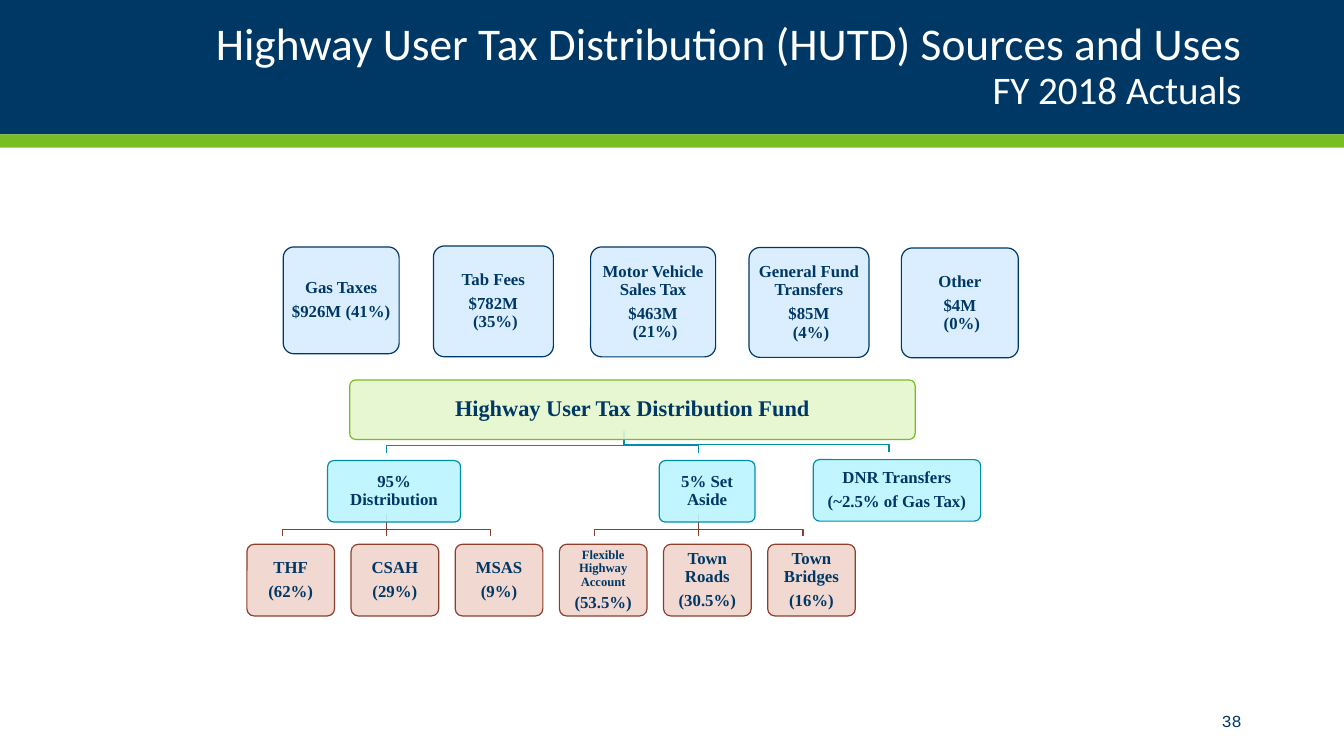
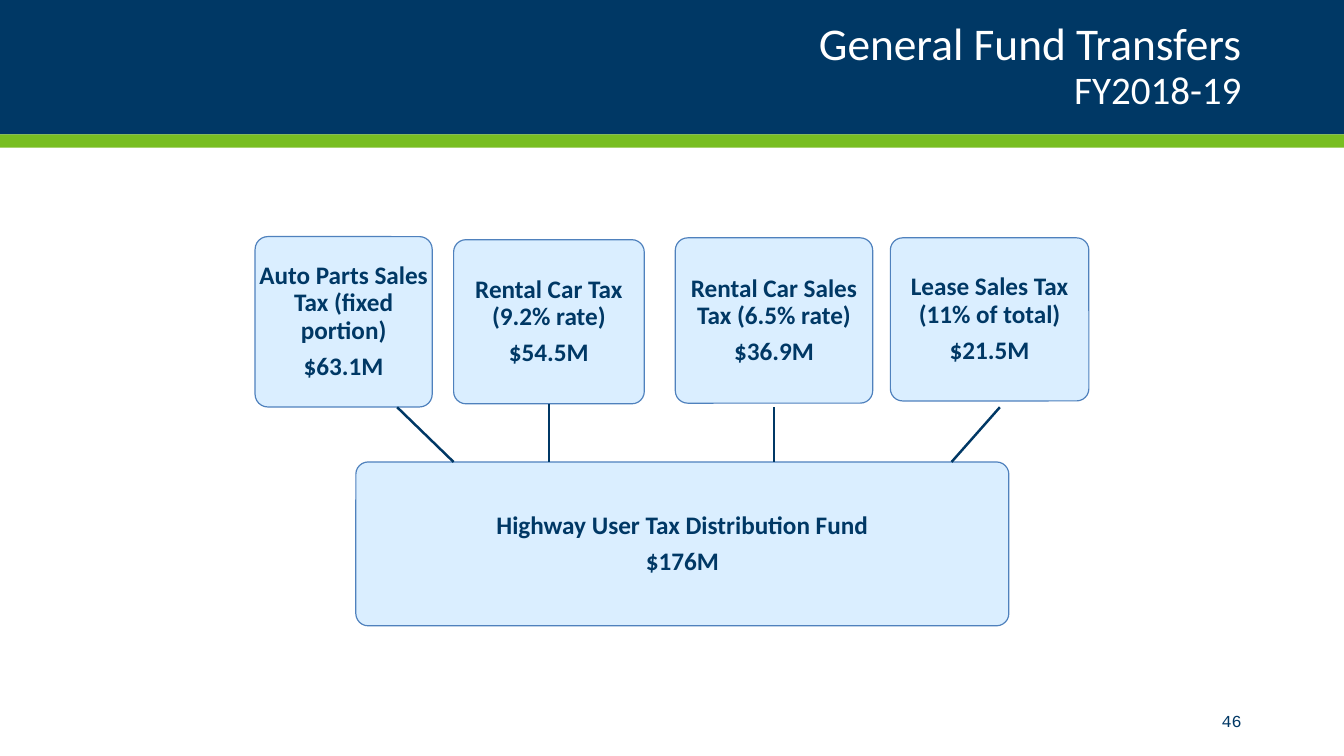
from dataclasses import dataclass

from lxml import etree
from pptx import Presentation
from pptx import util as u
from pptx.dml import color
from pptx.enum import shapes, text
from pptx.oxml import ns

Pt = u.Pt
C = {
    "navy": "003865", "green": "78BE21", "white": "FFFFFF", "sky": "D6EDFF",
    "lime": "E4F7CE", "aqua": "BBF4FF", "teal": "008EAA", "rose": "F0D4CD",
    "rust": "8D3F2B", "blue": "4F81BD",
}
TITLE_ONLY = 5


@dataclass(frozen=True)
class Style:
    fill: str
    line: str
    size: float = 12
    font: str = "Times New Roman"
    radius: float = 0.1
    margin: float = 3.6


@dataclass(frozen=True)
class Box:
    x: float
    y: float
    w: float
    h: float
    lines: tuple[str, ...]
    style: Style
    first_size: float = 0


@dataclass(frozen=True)
class Link:
    x1: float
    y1: float
    x2: float
    y2: float
    color: str
    width: float
    bend: float = 0


SOURCE = Style("sky", "navy")
FUND = Style("lime", "green", 16, margin=5)
USE = Style("aqua", "teal")
SHARE = Style("rose", "rust")
TRANSFER = Style("sky", "blue", 18, "Calibri", 0.075, 0)

SHARE_LEFT, SHARE_PITCH, SHARE_W = 176.4, 74.4, 62.6
SHARES = (
    ("THF", "(62%)"), ("CSAH", "(29%)"), ("MSAS", "(9%)"),
    ("Flexible Highway Account", "(53.5%)"),
    ("Town Roads", "(30.5%)"), ("Town Bridges", "(16%)"),
)
SHARE_X = [201.6 + SHARE_PITCH * i for i in range(len(SHARES))]
FUND_X = 445.7

HUTD_LINKS = [
    Link(FUND_X, 308.2, 635, 322.6, "teal", 0.85, 317.5),
    *(Link(FUND_X, 308.2, SHARE_X[i], 323.3, "teal", 0.85, 318.2) for i in (1, 4)),
    *(Link(SHARE_X[i // 3 * 3 + 1], 367.2, x, 383, "rust", 0.85, 378)
      for i, x in enumerate(SHARE_X)),
]
HUTD_BOXES = [
    Box(202.3, 176.4, 82.8, 76.3, ("Gas Taxes", "$926M (41%)"), SOURCE),
    Box(309.6, 175.7, 85.7, 79.2, ("Tab Fees", "$782M", " (35%)"), SOURCE),
    Box(421.9, 176.4, 89.3, 78.5, ("Motor Vehicle Sales Tax", "$463M", " (21%)"), SOURCE),
    Box(535, 176.8, 85.7, 78.5, ("General Fund Transfers", "$85M", " (4%)"), SOURCE),
    Box(643.9, 177.1, 83.5, 78.5, ("Other", "$4M", " (0%)"), SOURCE),
    Box(249.8, 271.4, 403.9, 42.5, ("Highway User Tax Distribution Fund",), FUND),
    Box(234, 329, 95, 43.9, ("95% Distribution",), USE),
    Box(470.9, 329, 68.4, 43.9, ("5% Set Aside",), USE),
    Box(581, 328.3, 119.5, 43.9, ("DNR Transfers", "(~2.5% of Gas Tax)"), USE),
    *(Box(SHARE_LEFT + SHARE_PITCH * i, 388.8, SHARE_W, 51.2, lines, SHARE,
          9 if i == 3 else 0)
      for i, lines in enumerate(SHARES)),
]

RENTAL = Box(324, 171.2, 136.2, 117.2, ("Rental Car Tax (9.2% rate)", "$54.5M"), TRANSFER)
TRANSFER_BOXES = [
    Box(182.2, 169, 126.5, 121.7,
        ("Auto Parts Sales Tax (fixed portion)", "$63.1M"), TRANSFER),
    Box(482.4, 169.9, 141, 118.1, ("Rental Car Sales Tax (6.5% rate)", "$36.9M"), TRANSFER),
    Box(636, 169.9, 141.8, 116.5, ("Lease Sales Tax (11% of total)", "\u00a0$21.5M".strip()), TRANSFER),
    Box(254.2, 330, 466.4, 117, ("Highway User Tax Distribution Fund", "$176M"), TRANSFER),
]
TRANSFER_LINKS = [
    Link(283.7, 290.9, 324, 330, "navy", 1.75),
    Link(552.9, 290.9, 552.9, 330, "navy", 1.75),
    Link(714.2, 290.9, 679.7, 330, "navy", 1.75),
]


def rgb(name: str) -> color.RGBColor:
    return color.RGBColor.from_string(C[name])


def apply(target, formats: dict) -> None:
    for name, value in formats.items():
        setattr(target, name, value)


def style_run(r, size: float, font: str, shade: str, bold: bool = False) -> None:
    apply(r.font, {"size": Pt(size), "name": font, "bold": bold})
    r.font.color.rgb = rgb(shade)


def add_box(s, box: Box):
    st = box.style
    sp = s.shapes.add_shape(shapes.MSO_SHAPE.ROUNDED_RECTANGLE,
                            Pt(box.x), Pt(box.y), Pt(box.w), Pt(box.h))
    sp.adjustments[0] = st.radius
    sp.shadow.inherit = False
    sp.fill.solid()
    sp.fill.fore_color.rgb = rgb(st.fill)
    shade = sp._element.spPr.find(ns.qn("a:solidFill"))[0]
    etree.SubElement(shade, ns.qn("a:alpha"), val="90000")
    sp.line.color.rgb = rgb(st.line)
    sp.line.width = Pt(0.85)
    tf = sp.text_frame
    margin = Pt(st.margin)
    apply(tf, {"word_wrap": True, "vertical_anchor": text.MSO_ANCHOR.MIDDLE,
               "margin_left": margin, "margin_right": margin,
               "margin_top": margin, "margin_bottom": margin})
    for i, line in enumerate(box.lines):
        p = tf.add_paragraph() if i else tf.paragraphs[0]
        amount_above_percent = i == 1 and len(box.lines) == 3
        size = box.first_size if box.first_size and i == 0 else st.size
        apply(p, {"alignment": text.PP_ALIGN.CENTER, "line_spacing": 0.9,
                  "space_after": Pt(0 if amount_above_percent else 0.35 * size)})
        r = p.add_run()
        r.text = line
        style_run(r, size, st.font, "navy", True)
    return sp


def add_link(s, link: Link):
    if link.bend and link.x1 != link.x2:
        fb = s.shapes.build_freeform(Pt(link.x1), Pt(link.y1))
        fb.add_line_segments([(Pt(link.x1), Pt(link.bend)), (Pt(link.x2), Pt(link.bend)),
                              (Pt(link.x2), Pt(link.y2))], close=False)
        sp = fb.convert_to_shape()
        sp.fill.background()
        sp.shadow.inherit = False
    else:
        sp = s.shapes.add_connector(shapes.MSO_CONNECTOR.STRAIGHT, Pt(link.x1),
                                    Pt(link.y1), Pt(link.x2), Pt(link.y2))
        etree.SubElement(sp._element.spPr, ns.qn("a:effectLst"))
    sp.line.color.rgb = rgb(link.color)
    sp.line.width = Pt(link.width)
    return sp


def set_up_layout(layout, s) -> None:
    for i, (y, h, shade) in enumerate(((0, 96, "navy"), (96, 9.4, "green"))):
        band = s.shapes.add_shape(shapes.MSO_SHAPE.RECTANGLE, 0, Pt(y), Pt(960), Pt(h))
        band.shadow.inherit = False
        band.fill.solid()
        band.fill.fore_color.rgb = rgb(shade)
        band.line.fill.background()
        layout.shapes._spTree.insert(2 + i, band._element)
    apply(layout.placeholders[0],
          {"left": Pt(66), "top": Pt(12), "width": Pt(828), "height": Pt(72)})


def add_heading(s, title: str, subtitle: str, number: str) -> None:
    tf = s.shapes.title.text_frame
    apply(tf, {"word_wrap": True, "auto_size": text.MSO_AUTO_SIZE.NONE,
               "vertical_anchor": text.MSO_ANCHOR.MIDDLE})
    p = tf.paragraphs[0]
    apply(p, {"alignment": text.PP_ALIGN.RIGHT, "line_spacing": 0.9})
    for i, (words, size) in enumerate(((title, 32.4), (subtitle, 27.9))):
        if i:
            p.add_line_break()
        r = p.add_run()
        r.text = words
        style_run(r, size, "Calibri", "white")
    tf = s.shapes.add_textbox(Pt(779), Pt(500.4), Pt(115), Pt(28.8)).text_frame
    apply(tf, {"word_wrap": True, "vertical_anchor": text.MSO_ANCHOR.MIDDLE})
    p = tf.paragraphs[0]
    p.alignment = text.PP_ALIGN.RIGHT
    r = p.add_run()
    r.text = number
    style_run(r, 12, "Courier New", "navy")


def main() -> None:
    prs = Presentation()
    apply(prs, {"slide_width": Pt(960), "slide_height": Pt(540)})
    layout = prs.slide_layouts[TITLE_ONLY]

    s = prs.slides.add_slide(layout)
    set_up_layout(layout, s)
    add_heading(s, "Highway User Tax Distribution (HUTD) Sources and Uses",
                "FY 2018 Actuals", "38")
    for link in HUTD_LINKS:
        add_link(s, link)
    for box in HUTD_BOXES:
        add_box(s, box)

    s = prs.slides.add_slide(layout)
    add_heading(s, "General Fund Transfers", "FY2018-19", "46")
    for box in TRANSFER_BOXES:
        add_box(s, box)
    rental = add_box(s, RENTAL)
    for link in TRANSFER_LINKS:
        add_link(s, link)
    center = RENTAL.x + RENTAL.w / 2
    rental_link = add_link(s, Link(center, 288.4, center, 330, "navy", 1.75))
    rental_link.begin_connect(rental, 2)

    prs.save("out.pptx")


if __name__ == "__main__":
    main()
